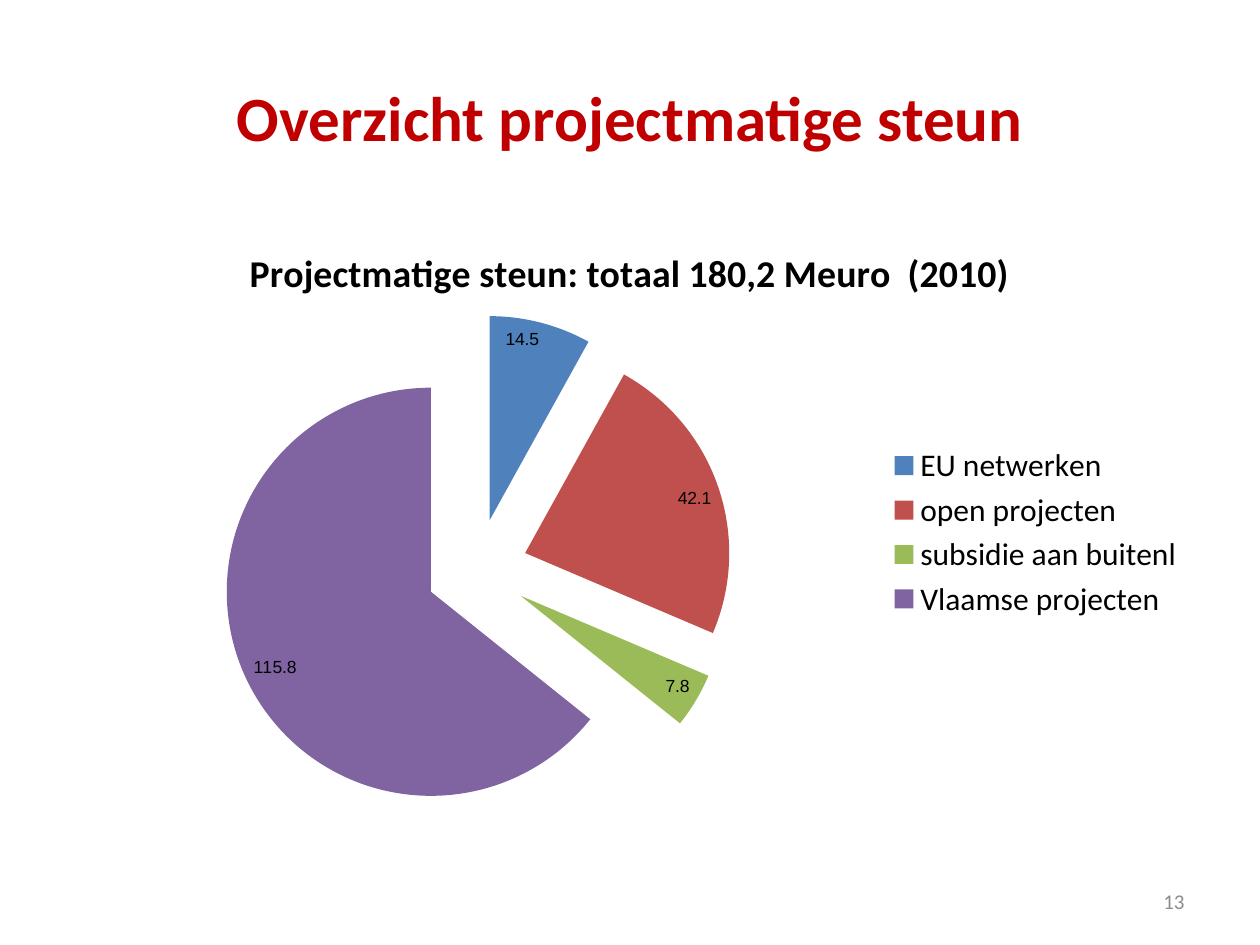
from lxml import etree
from pptx import Presentation
from pptx.chart.data import CategoryChartData
from pptx.dml.color import RGBColor
from pptx.enum.chart import XL_CHART_TYPE, XL_LABEL_POSITION, XL_LEGEND_POSITION
from pptx.enum.text import MSO_ANCHOR, PP_ALIGN
from pptx.oxml import parse_xml
from pptx.oxml.ns import nsdecls, qn
from pptx.util import Inches, Pt

PIE = XL_CHART_TYPE.PIE
INSIDE_END = XL_LABEL_POSITION.INSIDE_END
LEGEND_RIGHT = XL_LEGEND_POSITION.RIGHT
MIDDLE = MSO_ANCHOR.MIDDLE
CENTER, RIGHT = PP_ALIGN.CENTER, PP_ALIGN.RIGHT

RED = RGBColor(0xC0, 0x00, 0x00)
BLACK = RGBColor(0x00, 0x00, 0x00)
GREY = RGBColor(0x8C, 0x8C, 0x8C)
FONT = "Calibri"
LABEL_FONT = "Arial"

TITLE = "Overzicht projectmatige steun"
CHART_TITLE = "Projectmatige steun: totaal 180,2 Meuro  (2010)"
PAGE_NUMBER = "13"
SUPPORT = [
    ("EU netwerken", 14.5, RGBColor(0x4F, 0x81, 0xBD)),
    ("open projecten", 42.1, RGBColor(0xC0, 0x50, 0x4D)),
    ("subsidie aan buitenl", 7.8, RGBColor(0x9B, 0xBB, 0x59)),
    ("Vlaamse projecten", 115.8, RGBColor(0x80, 0x64, 0xA2)),
]
EXPLOSION = 25
PLOT_SHARES = {"x": 0.14, "y": 0.15, "w": 0.45, "h": 0.82}

WIDTH, HEIGHT = 10, 7.5
MARGIN = 0.5
CONTENT_WIDTH = WIDTH - 2 * MARGIN


def style(font, size, color, bold=False, name=FONT):
    font.name, font.size, font.bold = name, Pt(size), bold
    font.color.rgb = color


def write(frame, text, align, size, color, bold=False):
    frame.word_wrap = True
    frame.vertical_anchor = MIDDLE
    para = frame.paragraphs[0]
    para.alignment = align
    span = para.add_run()
    span.text = text
    style(span.font, size, color, bold)


def place_plot(chart):
    """Fix the inner plot area at shares of the chart's size."""
    layout = parse_xml(f"<c:layout {nsdecls('c')}/>")
    manual = etree.SubElement(layout, qn("c:manualLayout"))
    settings = [("layoutTarget", "inner"), ("xMode", "edge"), ("yMode", "edge")]
    for tag, value in settings + list(PLOT_SHARES.items()):
        etree.SubElement(manual, qn(f"c:{tag}")).set("val", str(value))
    plot_area = chart.plots[0]._element.getparent()
    for old in plot_area.findall(qn("c:layout")):
        plot_area.remove(old)
    plot_area.insert(0, layout)


def explode(series):
    explosion = parse_xml(f'<c:explosion {nsdecls("c")} val="{EXPLOSION}"/>')
    series._element.find(qn("c:dPt")).addprevious(explosion)


def add_support_chart(page):
    data = CategoryChartData(number_format="0.0")
    data.categories = [name for name, _, _ in SUPPORT]
    data.add_series("Series 1", [value for _, value, _ in SUPPORT])
    chart = page.shapes.add_chart(
        PIE, Inches(MARGIN), Inches(1.75), Inches(CONTENT_WIDTH), Inches(4.95), data
    ).chart
    style(chart.font, 18, BLACK)

    chart.has_title = True
    span = chart.chart_title.text_frame.paragraphs[0].add_run()
    span.text = CHART_TITLE
    style(span.font, 21.6, BLACK, bold=True)

    chart.has_legend = True
    chart.legend.position = LEGEND_RIGHT
    chart.legend.include_in_layout = False
    style(chart.legend.font, 18, BLACK)

    plot = chart.plots[0]
    plot.vary_by_categories = True
    series = plot.series[0]
    for index, (_, _, color) in enumerate(SUPPORT):
        fill = series.points[index].format.fill
        fill.solid()
        fill.fore_color.rgb = color
    explode(series)

    labels = series.data_labels
    labels.show_value = True
    labels.position = INSIDE_END
    labels.number_format = "0.0"
    labels.number_format_is_linked = False
    style(labels.font, 10, BLACK, name=LABEL_FONT)
    place_plot(chart)


def main():
    deck = Presentation()
    deck.slide_width, deck.slide_height = Inches(WIDTH), Inches(HEIGHT)
    page = deck.slides.add_slide(deck.slide_layouts[5])

    title = page.shapes.title
    title.left, title.top = Inches(MARGIN), Inches(0.3)
    title.width, title.height = Inches(CONTENT_WIDTH), Inches(1.25)
    write(title.text_frame, TITLE, CENTER, 36, RED, bold=True)

    add_support_chart(page)

    number_width = 2.33
    box = page.shapes.add_textbox(
        Inches(WIDTH - MARGIN - number_width), Inches(6.95),
        Inches(number_width), Inches(0.4),
    )
    write(box.text_frame, PAGE_NUMBER, RIGHT, 12, GREY)
    deck.save("out.pptx")


if __name__ == "__main__":
    main()
